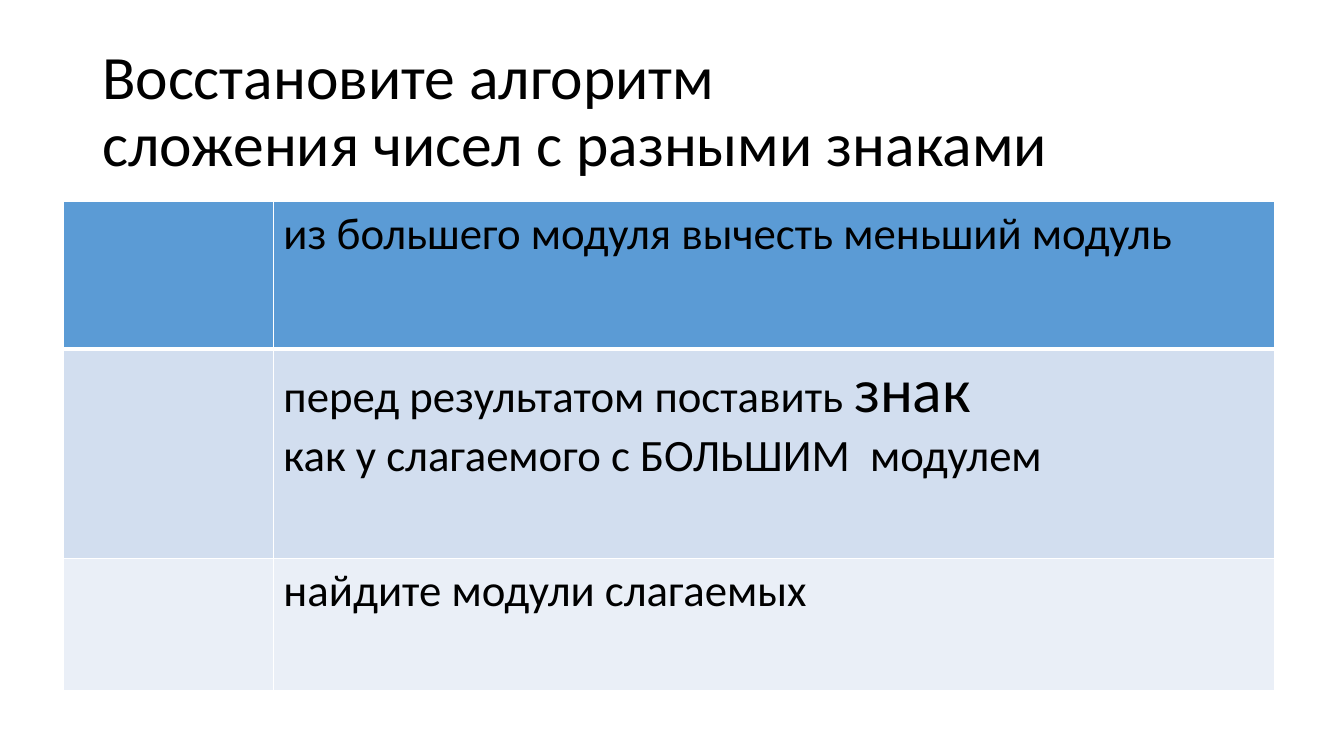
from lxml.etree import SubElement
from pptx import Presentation
from pptx.dml.color import RGBColor
from pptx.enum.text import MSO_ANCHOR
from pptx.oxml.ns import qn
from pptx.util import Cm, Pt

BLACK = RGBColor(0x00, 0x00, 0x00)
WHITE = RGBColor(0xFF, 0xFF, 0xFF)
BLUE = RGBColor(0x5B, 0x9B, 0xD5)
LIGHT_BLUE = RGBColor(0xD2, 0xDE, 0xEF)
PALE_BLUE = RGBColor(0xEA, 0xEF, 0xF7)

TITLE = ["Восстановите алгоритм", "сложения чисел с разными знаками"]
COLUMN_WIDTHS = [5.28, 25.22]
# Height, fill, and the paragraphs of the step as (text, size) spans
STEPS = [
    (3.71, BLUE, [[("из большего модуля вычесть меньший модуль", 32)]]),
    (5.28, LIGHT_BLUE, [
        [("перед результатом поставить ", 32), ("знак", 44)],
        [("как у слагаемого с БОЛЬШИМ  модулем", 32)],
    ]),
    (3.33, PALE_BLUE, [[("найдите модули слагаемых", 32)]]),
]


def add_span(para, text, size=32, font="Calibri", color=BLACK, bold=False):
    span = para.add_run()
    span.text = text
    span.font.size = Pt(size)
    span.font.name = font
    span.font.bold = bold
    span.font.color.rgb = color


def add_title(page, left, top, width, height):
    box = page.shapes.add_textbox(Cm(left), Cm(top), Cm(width), Cm(height))
    frame = box.text_frame
    frame.word_wrap = True
    frame.vertical_anchor = MSO_ANCHOR.MIDDLE
    para = frame.paragraphs[0]
    para.line_spacing = 0.9
    for index, line in enumerate(TITLE):
        if index:
            para.add_line_break()
        add_span(para, line, size=44)


def set_borders(cell, bottom_width):
    """Draw white edges; must run before the cell gets its fill."""
    properties = cell._tc.get_or_add_tcPr()
    for side, width in (("L", 1), ("R", 1), ("T", 1), ("B", bottom_width)):
        line = SubElement(properties, qn(f"a:ln{side}"), w=str(Pt(width)))
        fill = SubElement(line, qn("a:solidFill"))
        SubElement(fill, qn("a:srgbClr"), val=str(WHITE))


def add_steps_table(page, left, top, width, height):
    frame = page.shapes.add_table(len(STEPS), len(COLUMN_WIDTHS),
                                  Cm(left), Cm(top), Cm(width), Cm(height))
    table = frame.table
    table.first_row = False
    table.horz_banding = False
    for column, share in zip(table.columns, COLUMN_WIDTHS):
        column.width = Cm(width * share / sum(COLUMN_WIDTHS))
    total = sum(step[0] for step in STEPS)
    for index, (share, color, paragraphs) in enumerate(STEPS):
        row = table.rows[index]
        row.height = Cm(height * share / total)
        for cell in row.cells:
            set_borders(cell, bottom_width=3 if index == 0 else 1)
            cell.fill.solid()
            cell.fill.fore_color.rgb = color
        text_frame = row.cells[1].text_frame
        for number, spans in enumerate(paragraphs):
            para = text_frame.add_paragraph() if number else text_frame.paragraphs[0]
            for text, size in spans:
                add_span(para, text, size=size)


def main():
    deck = Presentation()
    deck.slide_width = Cm(33.87)
    deck.slide_height = Cm(19.05)
    page = deck.slides.add_slide(deck.slide_layouts[6])
    add_title(page, 2.33, 1.01, 29.21, 3.68)
    add_steps_table(page, 1.61, 5.08, 30.5, 12.32)
    deck.save("out.pptx")


if __name__ == "__main__":
    main()
